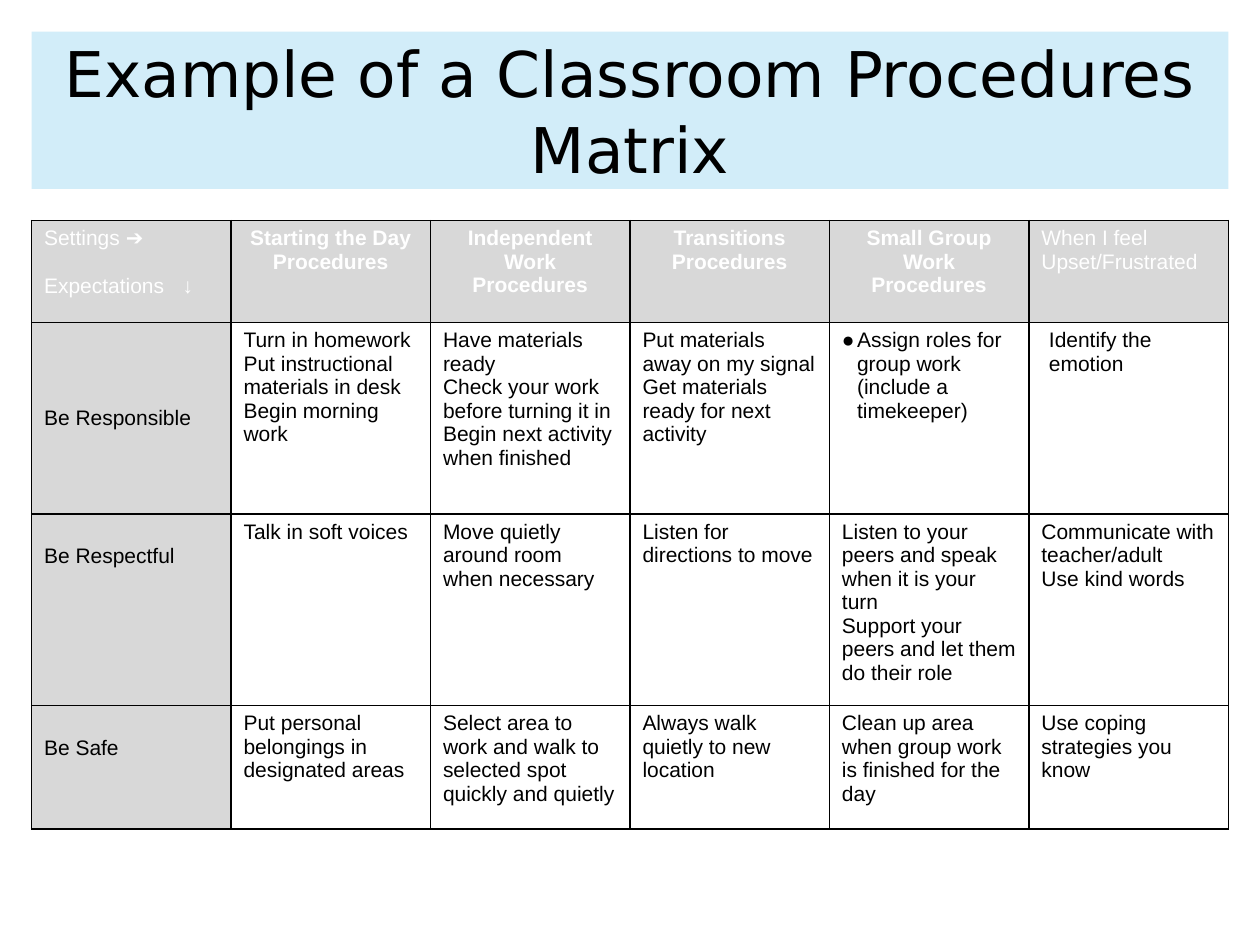
from lxml.etree import SubElement
from pptx import Presentation
from pptx.dml.color import RGBColor
from pptx.enum.text import MSO_ANCHOR, MSO_AUTO_SIZE, PP_ALIGN
from pptx.oxml import parse_xml
from pptx.oxml.ns import nsdecls, qn
from pptx.util import Inches, Pt

BLACK = RGBColor(0x00, 0x00, 0x00)
WHITE = RGBColor(0xFF, 0xFF, 0xFF)
GRAY = RGBColor(0xD8, 0xD8, 0xD8)
PALE_BLUE = RGBColor(0xD2, 0xED, 0xF9)

LINE_HEIGHT = Pt(13.8)
ROW_HEIGHTS = (0.81, 1.52, 1.52, 0.98)
BULLETED_CELL = (1, 4)
INDENTED_CELL = (1, 5)
MATRIX = [
    [
        ["Settings ➔", "Expectations\t↓"],
        ["Starting the Day", "Procedures"],
        ["Independent Work", "Procedures"],
        ["Transitions", "Procedures"],
        ["Small Group Work", "Procedures"],
        ["When I feel Upset/Frustrated"],
    ],
    [
        ["Be Responsible"],
        ["Turn in homework", "Put instructional materials in desk", "Begin morning work"],
        ["Have materials ready", "Check your work before turning it in",
         "Begin next activity when finished"],
        ["Put materials away on my signal", "Get materials ready for next activity"],
        ["Assign roles for group work (include a timekeeper)"],
        ["Identify the emotion"],
    ],
    [
        ["Be Respectful"],
        ["Talk in soft voices"],
        ["Move quietly around room when necessary"],
        ["Listen for directions to move"],
        ["Listen to your peers and speak when it is your turn",
         "Support your peers and let them do their role"],
        ["Communicate with teacher/adult", "Use kind words"],
    ],
    [
        ["Be Safe"],
        ["Put personal belongings in designated areas"],
        ["Select area to work and walk to selected spot quickly and quietly"],
        ["Always walk quietly to new location"],
        ["Clean up area when group work is finished for the day"],
        ["Use coping strategies you know"],
    ],
]


def add_run(paragraph, text, font_name, size, color, bold=False):
    run = paragraph.add_run()
    run.text = text
    run.font.name = font_name
    run.font.size = Pt(size)
    run.font.color.rgb = color
    run.font.bold = bold


def add_title(slide, left, top, width, height):
    title = slide.shapes.title
    title.left, title.top, title.width, title.height = left, top, width, height
    title.fill.solid()
    title.fill.fore_color.rgb = PALE_BLUE
    frame = title.text_frame
    frame.word_wrap = True
    frame.auto_size = MSO_AUTO_SIZE.NONE
    frame.vertical_anchor = MSO_ANCHOR.MIDDLE
    paragraph = frame.paragraphs[0]
    paragraph.alignment = PP_ALIGN.CENTER
    add_run(paragraph, "Example of a Classroom Procedures Matrix", "DejaVu Sans", 36, BLACK)


def set_borders(cell):
    properties = cell._tc.get_or_add_tcPr()
    for position, side in enumerate(("lnL", "lnR", "lnT", "lnB")):
        border = parse_xml(
            f'<a:{side} {nsdecls("a")} w="{Pt(1)}"><a:solidFill>'
            f'<a:srgbClr val="{BLACK}"/></a:solidFill></a:{side}>'
        )
        properties.insert(position, border)


def set_indent(paragraph, margin, hanging=0):
    properties = paragraph._p.get_or_add_pPr()
    properties.set("marL", str(Inches(margin)))
    properties.set("indent", str(-Inches(hanging)))
    return properties


def add_bullet(paragraph):
    properties = set_indent(paragraph, 0.12, 0.12)
    color = SubElement(properties, qn("a:buClr"))
    SubElement(color, qn("a:srgbClr"), val=str(BLACK))
    SubElement(properties, qn("a:buFont"), typeface="Arial")
    SubElement(properties, qn("a:buChar"), char="●")


def add_tab_stop(paragraph, position):
    tabs = SubElement(paragraph._p.get_or_add_pPr(), qn("a:tabLst"))
    SubElement(tabs, qn("a:tab"), pos=str(Inches(position)), algn="l")


def fill_cell(cell, row, column, lines):
    is_header = row == 0
    is_centered = is_header and 0 < column < 5
    if is_header or column == 0:
        cell.fill.solid()
        cell.fill.fore_color.rgb = GRAY
    else:
        cell.fill.background()
    set_borders(cell)
    cell.margin_left = cell.margin_right = Inches(0.1)
    cell.margin_top = cell.margin_bottom = Inches(0.05)
    if column == 0 and row == 1:
        cell.vertical_anchor = MSO_ANCHOR.MIDDLE
    elif column == 0 and row > 1:
        cell.margin_top = Inches(0.05) + LINE_HEIGHT
    for index, line in enumerate(lines):
        frame = cell.text_frame
        paragraph = frame.add_paragraph() if index else frame.paragraphs[0]
        paragraph.alignment = PP_ALIGN.CENTER if is_centered else PP_ALIGN.LEFT
        add_run(paragraph, line, "Arial", 12, WHITE if is_header else BLACK, is_centered)
        if (row, column) == BULLETED_CELL:
            add_bullet(paragraph)
        elif (row, column) == INDENTED_CELL:
            set_indent(paragraph, 0.06)
        elif (row, column, index) == (0, 0, 1):
            add_tab_stop(paragraph, 1.1)
            paragraph.space_before = LINE_HEIGHT


def add_matrix(slide, left, top, width, height):
    rows, columns = len(MATRIX), len(MATRIX[0])
    table = slide.shapes.add_table(rows, columns, left, top, width, height).table
    table.first_row = False
    table.horz_banding = False
    for column in table.columns:
        column.width = width // columns
    for row, share in zip(table.rows, ROW_HEIGHTS):
        row.height = int(height * share / sum(ROW_HEIGHTS))
    for row, entries in enumerate(MATRIX):
        for column, lines in enumerate(entries):
            fill_cell(table.cell(row, column), row, column, lines)


def main():
    presentation = Presentation()
    presentation.slide_width = Inches(10)
    presentation.slide_height = Inches(7.5)
    slide = presentation.slides.add_slide(presentation.slide_layouts[5])
    margin = presentation.slide_width // 40
    content_width = presentation.slide_width - 2 * margin
    title_height = presentation.slide_height // 6
    add_title(slide, margin, margin, content_width, title_height)
    add_matrix(slide, margin, 2 * margin + title_height, content_width, Inches(sum(ROW_HEIGHTS)))
    presentation.save("out.pptx")


if __name__ == "__main__":
    main()
